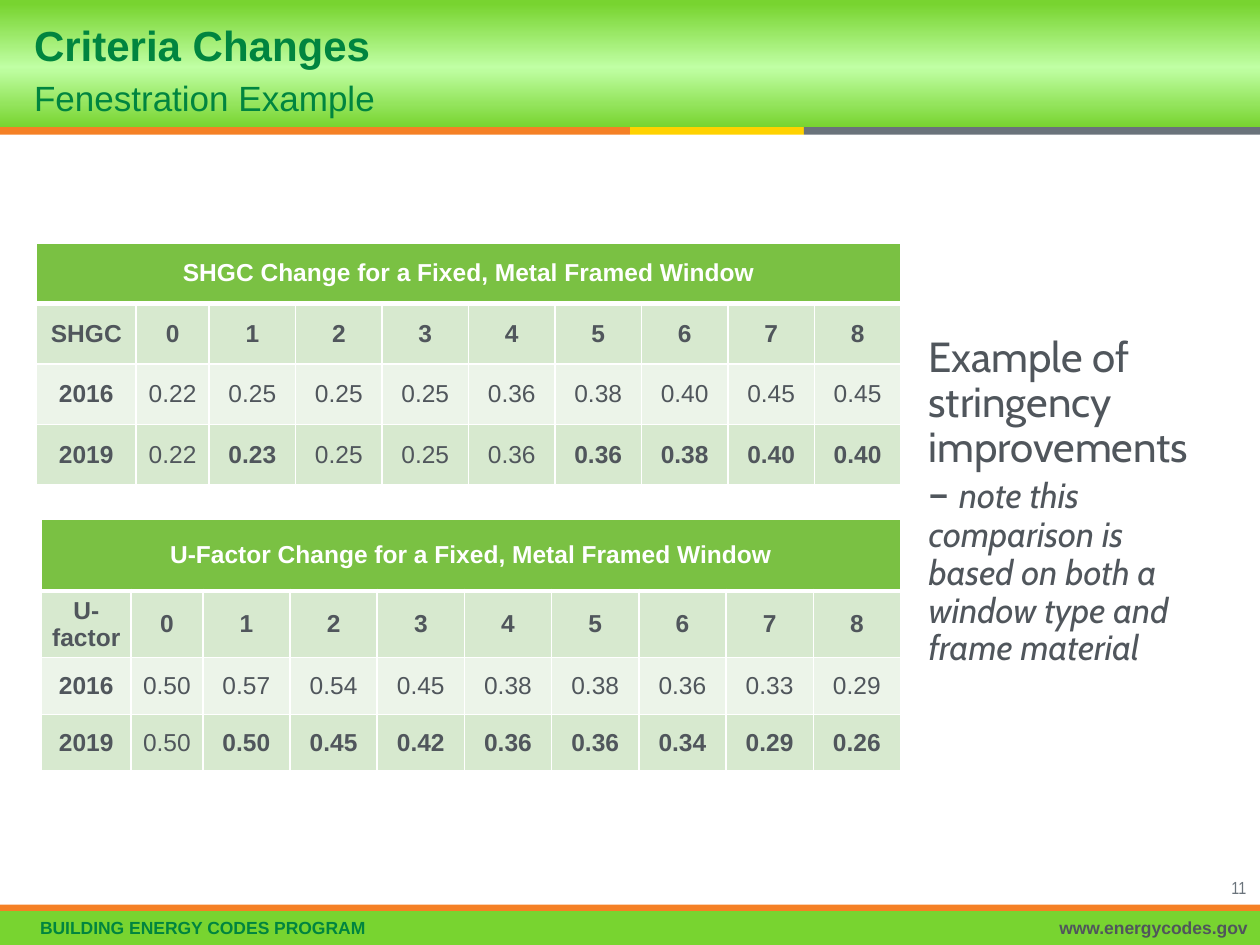
from copy import deepcopy
from dataclasses import dataclass

from lxml.etree import SubElement
from pptx import Presentation
from pptx.dml.color import RGBColor
from pptx.enum.shapes import MSO_SHAPE
from pptx.enum.text import MSO_ANCHOR, MSO_AUTO_SIZE, PP_ALIGN
from pptx.oxml.ns import qn
from pptx.util import Inches, Pt


@dataclass(frozen=True)
class Theme:
    # Colours
    green: str = "78D430"
    glow: str = "C0FFA4"
    title: str = "00853F"
    orange: str = "F58025"
    yellow: str = "FFD200"
    gray: str = "6A737B"
    text: str = "50565C"
    white: str = "FFFFFF"
    table_head: str = "7AC143"
    row_dark: str = "D7E9CF"
    row_light: str = "ECF4E9"
    # Fonts and type sizes
    font: str = "Arial"
    narrow: str = "Arial Narrow"
    side: str = "Cabin"
    title_size: int = 24
    subtitle_size: int = 20
    table_size: int = 14
    footer_size: int = 10


T = Theme()


def rgb(value):
    return RGBColor.from_string(value)


def add_run(p, text, size, color=T.text, font=T.font, bold=False, italic=False):
    r = p.add_run()
    r.text = text
    f = r.font
    f.name, f.size, f.bold, f.italic = font, Pt(size), bold, italic
    f.color.rgb = rgb(color)
    return r


def set_frame(tf, inset_x, inset_y):
    tf.word_wrap = True
    tf.auto_size = MSO_AUTO_SIZE.NONE
    tf.vertical_anchor = MSO_ANCHOR.MIDDLE
    tf.margin_left = tf.margin_right = Inches(inset_x)
    tf.margin_top = tf.margin_bottom = Inches(inset_y)


def add_box(s, box, inset_x=0.1, inset_y=0, align=PP_ALIGN.LEFT, spacing=None):
    """Add a text box and return its first paragraph."""
    tf = s.shapes.add_textbox(*map(Inches, box)).text_frame
    set_frame(tf, inset_x, inset_y)
    p = tf.paragraphs[0]
    p.alignment, p.line_spacing = align, spacing
    return p


def add_bar(s, box, color):
    sp = s.shapes.add_shape(MSO_SHAPE.RECTANGLE, *map(Inches, box))
    sp.shadow.inherit = False
    sp.fill.solid()
    sp.fill.fore_color.rgb = rgb(color)
    sp.line.fill.background()
    return sp


def glow_fill(sp):
    """Vertical gradient that is brightest near the middle."""
    sp.fill.gradient()
    sp.fill.gradient_angle = 90
    stop = sp.fill.gradient_stops
    gs_list = sp.element.find(".//" + qn("a:gsLst"))
    gs_list.append(deepcopy(gs_list[-1]))
    stop = sp.fill.gradient_stops
    for gs, position, color in zip(stop, (0, 0.47, 0.97),
                                   (T.green, T.glow, T.green)):
        gs.position = position
        gs.color.rgb = rgb(color)


def add_header(s, box, title, subtitle):
    left, top, width, height = box
    glow_fill(add_bar(s, box, T.green))

    # Three-colour rule under the band
    x = left
    for w, color in ((5, T.orange), (1.38, T.yellow), (3.62, T.gray)):
        add_bar(s, (x, top + height, w, 0.06), color)
        x += w

    # Title placeholder, raised above the band
    sp = s.shapes.title
    sp.left, sp.top = Inches(left + 0.17), Inches(top + 0.01)
    sp.width, sp.height = Inches(width - 0.63), Inches(1.09)
    s.shapes.element.append(sp.element)
    set_frame(sp.text_frame, 0.1, 0.05)
    p = sp.text_frame.paragraphs[0]
    p.alignment, p.line_spacing = PP_ALIGN.LEFT, Pt(28)
    add_run(p, title, T.title_size, T.title, bold=True)
    p.add_line_break()
    add_run(p, subtitle, T.subtitle_size, T.title)


def add_footer(s, box, program, site, number):
    left, top, width, height = box
    add_bar(s, box, T.green)
    add_bar(s, (left, top - 0.05, width, 0.05), T.orange)
    p = add_box(s, (left + 0.22, top, 5, height))
    add_run(p, program, T.footer_size, T.title, bold=True)
    p = add_box(s, (left + width - 4, top, 4, height), align=PP_ALIGN.RIGHT)
    add_run(p, site, T.footer_size, bold=True)
    p = add_box(s, (left + width - 0.72, top - 0.28, 0.71, 0.18),
                align=PP_ALIGN.RIGHT)
    add_run(p, number, T.footer_size, T.gray, T.narrow)


def set_borders(cell, top=1, bottom=1):
    tc_pr = cell._tc.get_or_add_tcPr()
    for side, width in (("L", 1), ("R", 1), ("T", top), ("B", bottom)):
        ln = SubElement(tc_pr, qn(f"a:ln{side}"), w=str(Pt(width)))
        fill = SubElement(ln, qn("a:solidFill"))
        SubElement(fill, qn("a:srgbClr"), val=T.white)


def fill_cell(cell, text, fill, color=T.text, bold=True, top=1, bottom=1):
    set_borders(cell, top, bottom)
    cell.fill.solid()
    cell.fill.fore_color.rgb = rgb(fill)
    cell.vertical_anchor = MSO_ANCHOR.MIDDLE
    cell.margin_left = cell.margin_right = Inches(0.07)
    cell.margin_top = cell.margin_bottom = Inches(0.04)
    p = cell.text_frame.paragraphs[0]
    p.alignment = PP_ALIGN.CENTER
    add_run(p, text, T.table_size, color, bold=bold)


def add_zone_table(s, box, heading, label, old, new, first_cols, heights):
    """Compare two editions by climate zone; changed 2019 values are bold."""
    old, new = old.split(), new.split()
    zones = [str(i) for i in range(len(old))]
    rows = [[label] + zones, ["2016"] + old, ["2019"] + new]
    n = len(rows[0])
    table = s.shapes.add_table(len(rows) + 1, n, *map(Inches, box)).table

    rest = (box[2] - sum(first_cols)) / (n - len(first_cols))
    widths = list(first_cols) + [rest] * (n - len(first_cols))
    for col, width in zip(table.columns, widths):
        col.width = Inches(width)
    for row, height in zip(table.rows, heights):
        row.height = Inches(height)

    head = table.cell(0, 0)
    head.merge(table.cell(0, n - 1))
    fill_cell(head, heading, T.table_head, T.white, bottom=3)
    for i, values in enumerate(rows, 1):
        for j, value in enumerate(values):
            changed = i == 3 and value != rows[1][j]
            fill_cell(table.cell(i, j), value,
                      T.row_light if i == 2 else T.row_dark,
                      bold=i == 1 or j == 0 or changed,
                      top=3 if i == 1 else 1)


def add_side_note(s, box, lead, note):
    p = add_box(s, box, 0.07, 0.04, spacing=0.9)
    add_run(p, lead, T.title_size, font=T.side)
    add_run(p, note, T.subtitle_size, font=T.side, italic=True)


def main():
    prs = Presentation()
    prs.slide_width, prs.slide_height = Inches(10), Inches(7.5)
    s = prs.slides.add_slide(prs.slide_layouts[5])

    add_header(s, (0, 0, 10, 1.01), "Criteria Changes", "Fenestration Example")
    add_footer(s, (0, 7.23, 10, 0.27), "BUILDING ENERGY CODES PROGRAM",
               "www.energycodes.gov", "11")
    add_side_note(s, (7.3, 1.93, 2.37, 4.11),
                  "Example of stringency improvements – ",
                  "note this comparison is based on both a window type "
                  "and frame material")
    add_zone_table(s, (0.33, 4.12, 6.82, 2),
                   "U-Factor Change for a Fixed, Metal Framed Window", "U-factor",
                   "0.50 0.57 0.54 0.45 0.38 0.38 0.36 0.33 0.29",
                   "0.50 0.50 0.45 0.42 0.36 0.36 0.34 0.29 0.26",
                   (0.71, 0.57), (0.57, 0.53, 0.45, 0.45))
    add_zone_table(s, (0.29, 1.93, 6.86, 1.93),
                   "SHGC Change for a Fixed, Metal Framed Window", "SHGC",
                   "0.22 0.25 0.25 0.25 0.36 0.38 0.40 0.45 0.45",
                   "0.22 0.23 0.25 0.25 0.36 0.36 0.38 0.40 0.40",
                   (0.79, 0.58), (0.48,) * 4)
    prs.save("out.pptx")


if __name__ == "__main__":
    main()
